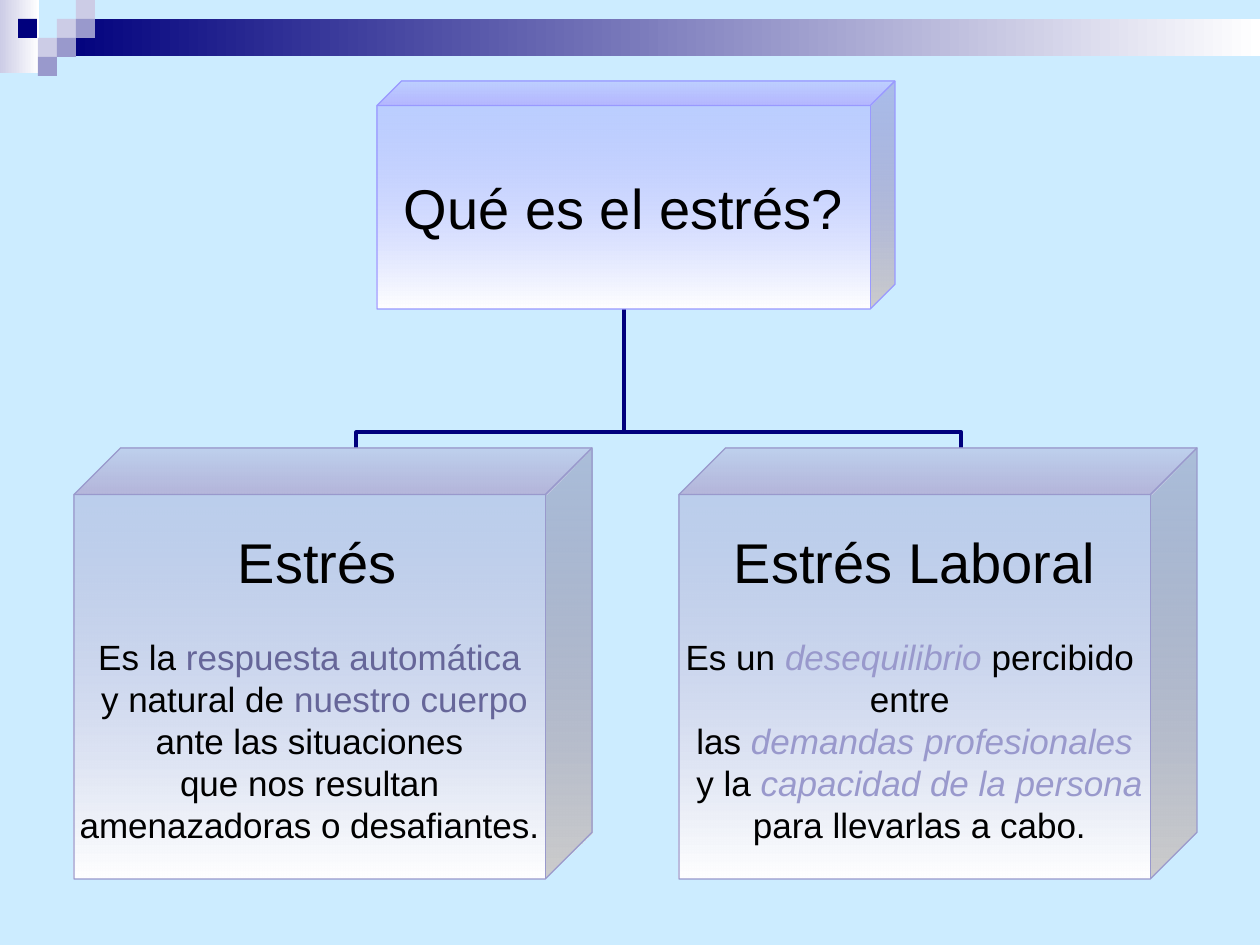
from lxml import etree
from pptx import Presentation
from pptx.dml.color import RGBColor
from pptx.enum.shapes import MSO_CONNECTOR, MSO_SHAPE
from pptx.enum.text import MSO_ANCHOR, PP_ALIGN
from pptx.oxml.ns import qn
from pptx.util import Pt

RECT, CUBE, ELBOW = MSO_SHAPE.RECTANGLE, MSO_SHAPE.CUBE, MSO_CONNECTOR.ELBOW
MIDDLE, CENTER = MSO_ANCHOR.MIDDLE, PP_ALIGN.CENTER
SCALE = 914400 / 126

COLORS = {
    "sky": "CCECFF", "navy": "00007D", "pale": "CCCCE6", "lilac": "9999CC",
    "violet": "9999FF", "slate": "666699", "black": "000000", "white": "FFFFFF",
}
BANDS = [((0, 0, 39, 73), "pale"), ((57, 19, 1203, 37), "navy")]
SQUARE = 19
SQUARES = [
    (57, 19, "pale"), (76, 0, "pale"), (76, 19, "lilac"), (38, 38, "pale"),
    (18, 19, "navy"), (57, 38, "lilac"), (38, 57, "lilac"),
]
DEPTH = 0.108
BEND = 0.114
BODY_GAP = 23
ROOT = {"box": (377, 81, 518, 228), "color": "violet", "title": "Qué es el estrés?", "body": []}
CHILDREN = [
    {"box": (74, 448, 518, 431), "color": "lilac", "title": " Estrés", "body": [
        [("Es la ", "black", False), ("respuesta automática", "slate", False)],
        [(" y natural de ", "black", False), ("nuestro cuerpo", "slate", False)],
        [(" ante las situaciones ", "black", False)],
        [("que nos resultan", "black", False)],
        [(" amenazadoras o desafiantes. ", "black", False)],
    ]},
    {"box": (679, 448, 518, 431), "color": "lilac", "title": "Estrés Laboral", "body": [
        [("Es un ", "black", False), ("desequilibrio", "lilac", True), (" percibido ", "black", False)],
        [("entre ", "black", False)],
        [("las ", "black", False), ("demandas profesionales", "lilac", True)],
        [(" y la ", "black", False), ("capacidad de la persona", "lilac", True)],
        [(" para llevarlas a cabo.", "black", False)],
    ]},
]


def px(value):
    return round(value * SCALE)


def rgb(name):
    return RGBColor.from_string(COLORS[name])


def add_block(page, kind, box):
    shape = page.shapes.add_shape(kind, *map(px, box))
    shape.shadow.inherit = False
    shape.line.fill.background()
    return shape


def fade(shape, color, angle, alpha=None):
    shape.fill.gradient()
    shape.fill.gradient_angle = angle
    stops = shape.fill.gradient_stops
    for stop, name, position in zip(stops, (color, "white"), (0, 1)):
        stop.color.rgb = rgb(name)
        stop.position = position
    if alpha is not None:
        first = next(shape._element.spPr.iter(qn("a:srgbClr")))
        etree.SubElement(first, qn("a:alpha"), val=str(alpha * 1000))


def add_line(frame, index, spans, size):
    para = frame.add_paragraph() if index else frame.paragraphs[0]
    para.alignment = CENTER
    for text, color, italic in spans:
        span = para.add_run()
        span.text = text
        span.font.color.rgb = rgb(color)
        formats = {"name": "Arial", "size": Pt(size), "italic": italic}
        for name, value in formats.items():
            setattr(span.font, name, value)
    return para


def add_cube(page, node):
    cube = add_block(page, CUBE, node["box"])
    cube.adjustments[0] = DEPTH
    fade(cube, node["color"], 270, 40)
    cube.line.color.rgb = rgb(node["color"])
    cube.line.width = Pt(0.75)
    frame = cube.text_frame
    formats = {"word_wrap": False, "vertical_anchor": MIDDLE, "margin_left": 0,
               "margin_top": 0, "margin_right": 0, "margin_bottom": 0}
    for name, value in formats.items():
        setattr(frame, name, value)
    add_line(frame, 0, [(node["title"], "black", False)], 32)
    for index, spans in enumerate(node["body"], 1):
        para = add_line(frame, index, spans, 20)
        if index == 1:
            para.space_before = Pt(BODY_GAP)


def site(node, side):
    left, top, width, height = node["box"]
    shift = DEPTH * min(width, height) / 2
    if side == "top":
        return left + width / 2 + shift, top
    return left + width / 2 - shift, top + height


def add_link(page, child, root):
    (child_x, child_y), (root_x, root_y) = site(child, "top"), site(root, "bottom")
    middle_x, middle_y = (child_x + root_x) / 2, (child_y + root_y) / 2
    rise, run = child_y - root_y, abs(child_x - root_x)
    side = 1 if child_x > root_x else -1
    link = page.shapes.add_connector(
        ELBOW,
        px(middle_x + side * rise / 2), px(middle_y - run / 2),
        px(middle_x - side * rise / 2), px(middle_y + run / 2),
    )
    link.line.color.rgb = rgb("navy")
    link.line.width = Pt(2.25)
    properties = link._element.spPr
    properties.find(qn("a:xfrm")).set("rot", str(side * 90 % 360 * 60000))
    guides = properties.find(qn("a:prstGeom")).find(qn("a:avLst"))
    etree.SubElement(guides, qn("a:gd"), name="adj1", fmla=f"val {round(BEND * 100000)}")
    etree.SubElement(properties, qn("a:effectLst"))


def main():
    deck = Presentation()
    deck.slide_width, deck.slide_height = px(1260), px(945)
    page = deck.slides.add_slide(deck.slide_layouts[6])
    page.background.fill.solid()
    page.background.fill.fore_color.rgb = rgb("sky")
    for box, color in BANDS:
        fade(add_block(page, RECT, box), color, 0)
    for left, top, color in SQUARES:
        square = add_block(page, RECT, (left, top, SQUARE, SQUARE))
        square.fill.solid()
        square.fill.fore_color.rgb = rgb(color)
    for child in reversed(CHILDREN):
        add_link(page, child, ROOT)
    for node in [ROOT, *CHILDREN]:
        add_cube(page, node)
    deck.save("out.pptx")


if __name__ == "__main__":
    main()
